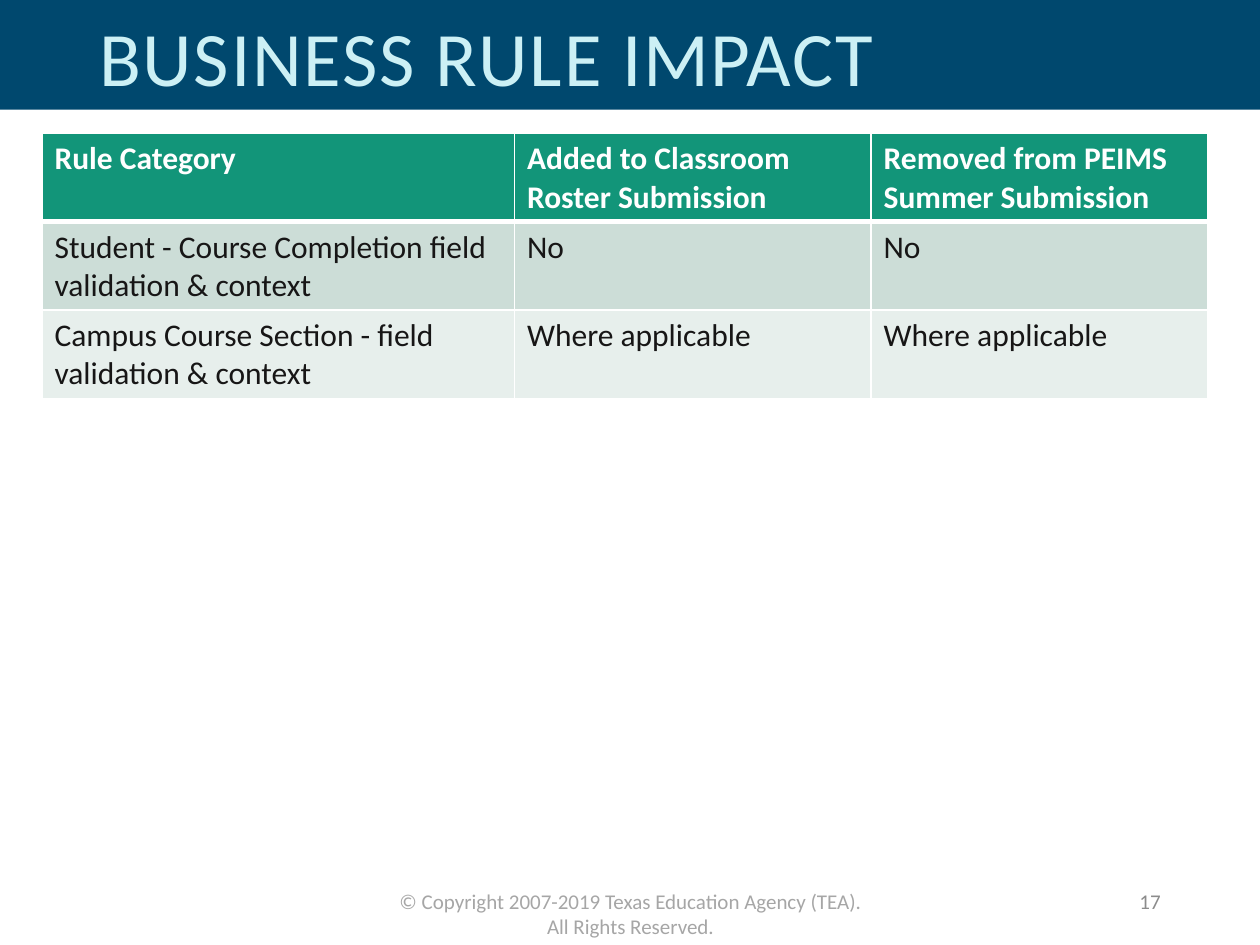
from lxml import etree
from pptx import Presentation
from pptx.dml.color import RGBColor
from pptx.enum import shapes, text
from pptx.oxml.ns import qn
from pptx.util import Pt

NAVY = RGBColor(0x00, 0x48, 0x6E)
AQUA = RGBColor(0xCC, 0xF0, 0xF5)
GREEN = RGBColor(0x12, 0x95, 0x79)
SAGE = RGBColor(0xCC, 0xDD, 0xD7)
MIST = RGBColor(0xE7, 0xEF, 0xEC)
WHITE = RGBColor(0xFF, 0xFF, 0xFF)
INK = RGBColor(0x17, 0x16, 0x16)
SILVER = RGBColor(0xA6, 0xA6, 0xA6)
GRAY = RGBColor(0x8C, 0x8C, 0x8C)

COLS = [270, 203.76, 192.24]
ROWS = [
    ["Rule Category", "Added to Classroom Roster Submission",
     "Removed from PEIMS Summer Submission"],
    ["Student - Course Completion field validation & context", "No", "No"],
    ["Campus Course Section - field validation & context",
     "Where applicable", "Where applicable"],
]


def add_run(para, words, size, color, bold=False):
    run = para.add_run()
    run.text = words
    font = run.font
    font.name, font.size, font.bold = "Calibri", Pt(size), bold
    font.color.rgb = color
    return run


def add_text(slide, box, words, size, color, align, anchor):
    frame = slide.shapes.add_textbox(*map(Pt, box)).text_frame
    frame.word_wrap = True
    frame.vertical_anchor = anchor
    para = frame.paragraphs[0]
    para.alignment = align
    return para, add_run(para, words, size, color)


def add_banner(slide, box):
    left, top, width, height = box
    bar = slide.shapes.add_shape(shapes.MSO_SHAPE.RECTANGLE, *map(Pt, box))
    bar.shadow.inherit = False
    bar.fill.solid()
    bar.fill.fore_color.rgb = NAVY
    bar.line.fill.background()
    para, run = add_text(
        slide, (left + 49.68, top + 3.6, width - 144, height),
        "BUSINESS RULE IMPACT", 44, AQUA,
        text.PP_ALIGN.LEFT, text.MSO_ANCHOR.MIDDLE)
    para.line_spacing = 0.9
    run.font._element.set("spc", "100")


def set_edges(cell, base):
    """Draw white cell borders, with the bottom one base points wide."""
    props = cell._tc.get_or_add_tcPr()
    for side, width in zip("LRTB", (1, 1, 1, base)):
        line = etree.SubElement(props, qn("a:ln" + side), w=str(Pt(width)))
        fill = etree.SubElement(line, qn("a:solidFill"))
        etree.SubElement(fill, qn("a:srgbClr"), val=str(WHITE))


def add_rules(slide, box):
    left, top, width, height = box
    table = slide.shapes.add_table(
        len(ROWS), len(COLS), *map(Pt, box)).table
    for col, size in zip(table.columns, COLS):
        col.width = Pt(size)
    for r, (row, fill) in enumerate(zip(ROWS, (GREEN, SAGE, MIST))):
        table.rows[r].height = Pt(height / len(ROWS))
        head = r == 0
        for c, words in enumerate(row):
            cell = table.cell(r, c)
            set_edges(cell, 3 if head else 1)
            cell.fill.solid()
            cell.fill.fore_color.rgb = fill
            add_run(cell.text_frame.paragraphs[0], words, 18,
                    WHITE if head else INK, head)


def add_footer(slide, box):
    left, top, width, height = box
    add_text(slide, (left + 218.88, top + 3.6, 282.96, 21.6),
             "© Copyright 2007-2019 Texas Education Agency (TEA). "
             "All Rights Reserved.", 12, SILVER,
             text.PP_ALIGN.CENTER, text.MSO_ANCHOR.TOP)
    add_text(slide, (left + 508.32, top, 162, height), "17", 12, GRAY,
             text.PP_ALIGN.RIGHT, text.MSO_ANCHOR.MIDDLE)


def main():
    deck = Presentation()
    deck.slide_width, deck.slide_height = Pt(720), Pt(540)
    slide = deck.slides.add_slide(deck.slide_layouts[6])
    add_banner(slide, (0, 0, 720, 62.64))
    add_rules(slide, (24, 76.32, sum(COLS), 151.2))
    add_footer(slide, (0, 500.4, 720, 28.8))
    deck.save("out.pptx")


if __name__ == "__main__":
    main()
